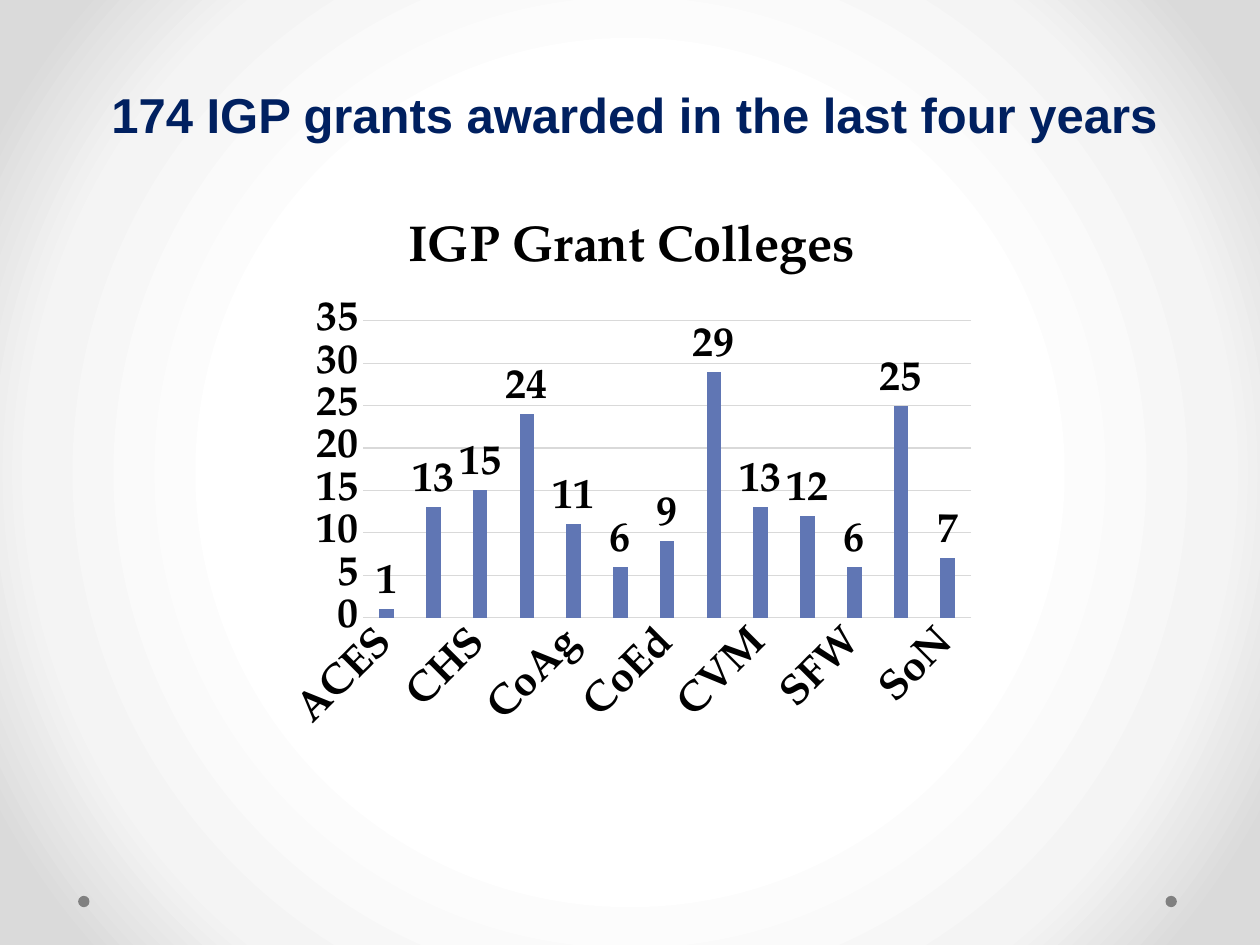
import pptx
import pptx.chart.data
import pptx.dml.color
import pptx.enum.chart
import pptx.enum.shapes
import pptx.enum.text
import pptx.oxml
import pptx.oxml.ns
import pptx.util

COLORS = {
    "title": "002060",
    "text": "000000",
    "bar": "6076B4",
    "grid": "D9D9D9",
    "dot": "808080",
}
BACKDROP = [(50, "FFFFFF"), (76, "F4F4F4"), (92, "DADADA")]
GRANTS = {
    "ACES": 1, "CADC": 13, "CHS": 15, "CLA": 24, "CoAg": 11, "CoB": 6, "CoEd": 9,
    "CoSAM": 29, "CVM": 13, "HSP": 12, "SFW": 6, "SGCoE": 25, "SoN": 7,
}


def color(name):
    return pptx.dml.color.RGBColor.from_string(COLORS[name])


class GrantSlide:
    """Holds the deck's style and its current page; places are shares of the page size."""

    title_font = "Arial"
    chart_font = "TeX Gyre Pagella"

    def __init__(self):
        self.deck = pptx.Presentation()
        self.deck.slide_width = pptx.util.Inches(10)
        self.deck.slide_height = pptx.util.Inches(7.5)
        self.page = self.deck.slides.add_slide(self.deck.slide_layouts[5])

    def place(self, left, top, width, height):
        across, down = self.deck.slide_width, self.deck.slide_height
        return [round(share * size) for share, size in
                zip((left, top, width, height), (across, down, across, down))]

    def style_font(self, font, name, size, shade):
        font.name = name
        font.size = pptx.util.Pt(size)
        font.bold = True
        font.color.rgb = color(shade)

    def backdrop(self, stops):
        """Fill the page with a gradient running out from its centre."""
        self.page.background.fill.gradient()
        gradient = next(self.page.element.iter(pptx.oxml.ns.qn("a:gradFill")))
        marks = "".join(f'<a:gs pos="{share * 1000}"><a:srgbClr val="{shade}"/></a:gs>'
                        for share, shade in stops)
        centred = pptx.oxml.parse_xml(
            f'<a:gradFill {pptx.oxml.ns.nsdecls("a")} rotWithShape="1"><a:gsLst>{marks}</a:gsLst>'
            '<a:path path="circle"><a:fillToRect l="50000" t="50000" r="50000" b="50000"/>'
            '</a:path></a:gradFill>')
        gradient.getparent().replace(gradient, centred)

    def dot(self, left, top, width, height):
        dot = self.page.shapes.add_shape(
            pptx.enum.shapes.MSO_SHAPE.OVAL, *self.place(left, top, width, height))
        dot.shadow.inherit = False
        dot.fill.solid()
        dot.fill.fore_color.rgb = color("dot")
        dot.line.fill.background()

    def title(self, text, left, top, width, height):
        box = self.page.shapes.title
        box.left, box.top, box.width, box.height = self.place(left, top, width, height)
        frame = box.text_frame
        frame.text = text
        frame.word_wrap = False
        frame.auto_size = pptx.enum.text.MSO_AUTO_SIZE.SHAPE_TO_FIT_TEXT
        para = frame.paragraphs[0]
        para.alignment = pptx.enum.text.PP_ALIGN.CENTER
        self.style_font(para.font, self.title_font, 28, "title")

    def column_chart(self, heading, values, left, top, width, height):
        data = pptx.chart.data.CategoryChartData()
        data.categories = list(values)
        data.add_series("Series 1", list(values.values()))
        chart = self.page.shapes.add_chart(
            pptx.enum.chart.XL_CHART_TYPE.COLUMN_CLUSTERED,
            *self.place(left, top, width, height), data).chart
        self.style_font(chart.font, self.chart_font, 24, "text")
        chart.has_legend = False
        chart.has_title = True
        chart.chart_title.include_in_layout = False
        chart.chart_title.text_frame.text = heading
        heading_para = chart.chart_title.text_frame.paragraphs[0]
        self.style_font(heading_para.font, self.chart_font, 28.8, "text")
        self.style_axes(chart)
        self.style_bars(chart.plots[0])

    def style_axes(self, chart):
        categories, scale = chart.category_axis, chart.value_axis
        for axis in (categories, scale):
            axis.major_tick_mark = pptx.enum.chart.XL_TICK_MARK.NONE
            axis.minor_tick_mark = pptx.enum.chart.XL_TICK_MARK.NONE
            self.style_font(axis.tick_labels.font, self.chart_font, 24, "text")
        scale.has_major_gridlines = True
        scale.format.line.fill.background()
        for rule in (categories.format.line, scale.major_gridlines.format.line):
            rule.color.rgb = color("grid")
            rule.width = pptx.util.Pt(0.75)

    def style_bars(self, plot):
        plot.gap_width = 219
        plot.overlap = -27
        plot.vary_by_categories = False
        bars = plot.series[0]
        bars.format.fill.solid()
        bars.format.fill.fore_color.rgb = color("bar")
        plot.has_data_labels = True
        labels = plot.data_labels
        labels.show_value = True
        labels.position = pptx.enum.chart.XL_LABEL_POSITION.OUTSIDE_END
        self.style_font(labels.font, self.chart_font, 24, "text")


def main():
    slide = GrantSlide()
    slide.backdrop(BACKDROP)
    for left in (0.925, 0.062):
        slide.dot(left, 7.11 / 7.5, 0.009, 0.012)
    slide.column_chart("IGP Grant Colleges", GRANTS, 0.22, 1.53 / 7.5, 0.562, 4.37 / 7.5)
    slide.title("174 IGP grants awarded in the last four years",
                0.073, 0.62 / 7.5, 0.861, 0.57 / 7.5)
    slide.deck.save("out.pptx")


if __name__ == "__main__":
    main()
